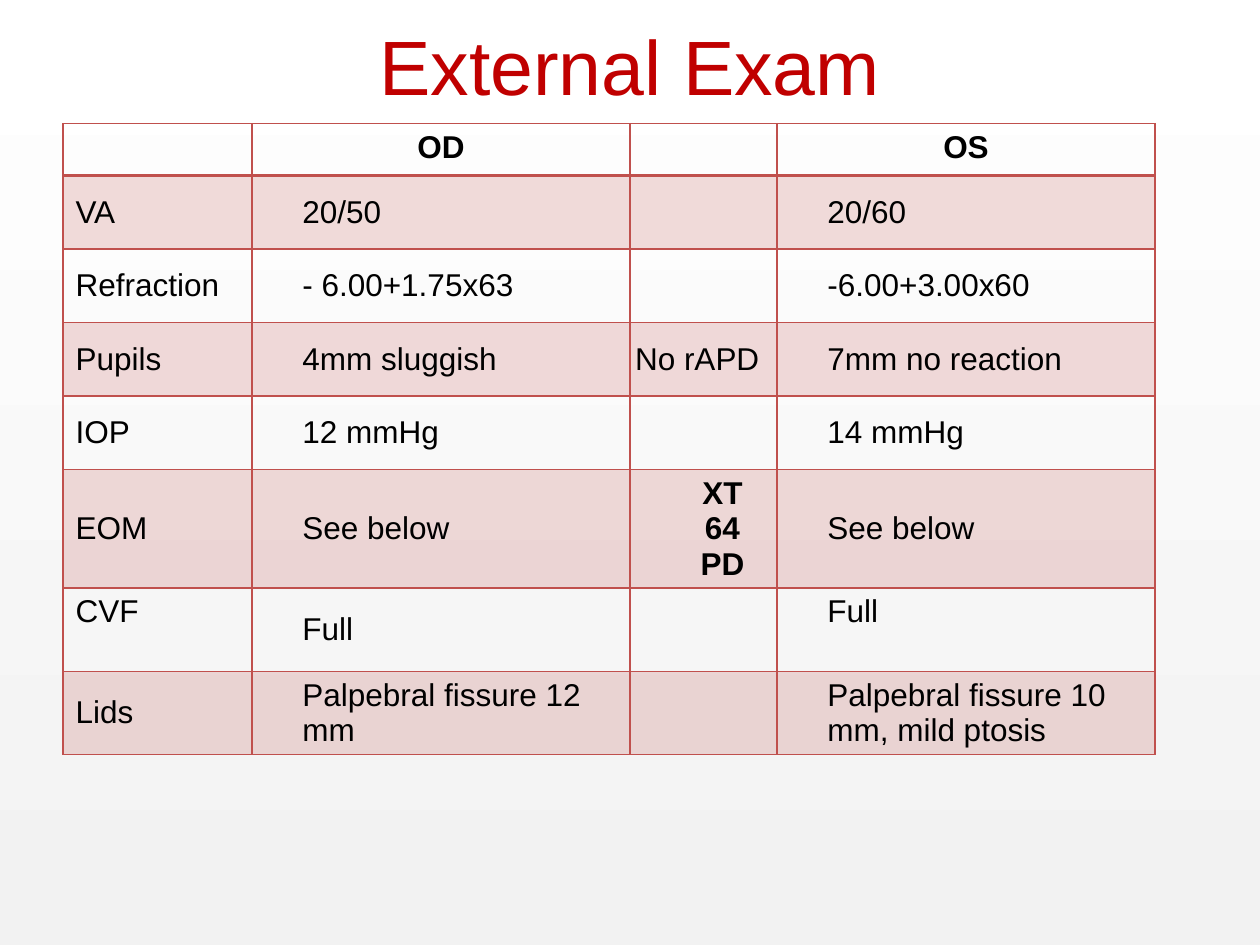
from lxml import etree
from pptx import Presentation
from pptx.dml.color import RGBColor
from pptx.enum.text import MSO_ANCHOR, PP_ALIGN
from pptx.oxml.ns import qn
from pptx.util import Pt

LEFT, CENTER = PP_ALIGN.LEFT, PP_ALIGN.CENTER
TOP, MIDDLE = MSO_ANCHOR.TOP, MSO_ANCHOR.MIDDLE

FONT = "Arial"
COLORS = {
    "title": "C00000",
    "text": "000000",
    "accent": "C0504D",
    "page_top": "FFFFFF",
    "page_bottom": "F2F2F2",
}
BAND_OPACITY = 20
TITLE_ONLY_LAYOUT = 5

EXAM = [
    ["", "OD", "", "OS"],
    ["VA", "20/50", "", "20/60"],
    ["Refraction", "- 6.00+1.75x63", "", "-6.00+3.00x60"],
    ["Pupils", "4mm sluggish", "No rAPD", "7mm no reaction"],
    ["IOP", "12 mmHg", "", "14 mmHg"],
    ["EOM", "See below", "XT 64 PD", "See below"],
    ["CVF", "Full", "", "Full"],
    ["Lids", "Palpebral fissure 12 mm", "", "Palpebral fissure 10 mm, mild ptosis"],
]
COLUMN_WIDTHS = [108, 216, 84, 216]
ROW_HEIGHTS = [29.5, 42.3, 42, 42, 42, 67.4, 47.6, 47.5]
INDENT = 28.8
CELL_MARGIN = 7.2
TOP_ANCHORED = {(6, 0), (6, 3)}


def write_text(frame, text, size=18, color="text", bold=False, align=LEFT):
    paragraph = frame.paragraphs[0]
    paragraph.alignment = align
    run = paragraph.add_run()
    run.text = text
    run.font.name = FONT
    run.font.size = Pt(size)
    run.font.bold = bold
    run.font.color.rgb = RGBColor.from_string(COLORS[color])


def paint_background(slide):
    fill = slide.background.fill
    fill.gradient()
    fill.gradient_angle = 90
    for stop, name in zip(fill.gradient_stops, ("page_bottom", "page_top")):
        stop.color.rgb = RGBColor.from_string(COLORS[name])


def add_title(slide):
    title = slide.shapes.title
    title.left, title.top, title.width, title.height = Pt(36), Pt(-7.9), Pt(648), Pt(90)
    title.text_frame.vertical_anchor = MIDDLE
    write_text(title.text_frame, "External Exam", size=44, color="title", align=CENTER)


def set_borders(cell, top=1, bottom=1):
    properties = cell._tc.get_or_add_tcPr()
    for side, width in (("L", 1), ("R", 1), ("T", top), ("B", bottom)):
        line = etree.SubElement(properties, qn(f"a:ln{side}"), w=str(Pt(width)))
        solid = etree.SubElement(line, qn("a:solidFill"))
        etree.SubElement(solid, qn("a:srgbClr"), val=COLORS["accent"])


def fill_cell(cell, banded):
    if not banded:
        cell.fill.background()
        return
    cell.fill.solid()
    cell.fill.fore_color.rgb = RGBColor.from_string(COLORS["accent"])
    tint = cell._tc.tcPr.find(f"{qn('a:solidFill')}/{qn('a:srgbClr')}")
    etree.SubElement(tint, qn("a:alpha"), val=str(BAND_OPACITY * 1000))


def format_cell(cell, row, column, text):
    header, middle_column = row == 0, column == 2
    set_borders(cell, top=2 if row == 1 else 1, bottom=2 if header else 1)
    fill_cell(cell, banded=row % 2 == 1)
    if not text:
        return
    at_top = header or (row, column) in TOP_ANCHORED
    cell.vertical_anchor = TOP if at_top else MIDDLE
    if text == "No rAPD":
        cell.margin_left = 0
    else:
        cell.margin_left = Pt(CELL_MARGIN if header or column == 0 else INDENT)
    write_text(cell.text_frame, text, bold=header or text == "XT 64 PD",
               align=CENTER if header or middle_column else LEFT)


def add_exam_table(slide):
    frame = slide.shapes.add_table(len(EXAM), len(COLUMN_WIDTHS), Pt(36), Pt(70.6),
                                   Pt(sum(COLUMN_WIDTHS)), Pt(sum(ROW_HEIGHTS)))
    table = frame.table
    table.first_row = False
    table.horz_banding = False
    for column, width in zip(table.columns, COLUMN_WIDTHS):
        column.width = Pt(width)
    for row, height in zip(table.rows, ROW_HEIGHTS):
        row.height = Pt(height)
    for r, findings in enumerate(EXAM):
        for c, text in enumerate(findings):
            format_cell(table.cell(r, c), r, c, text)


def main():
    deck = Presentation()
    deck.slide_width, deck.slide_height = Pt(720), Pt(540)
    slide = deck.slides.add_slide(deck.slide_layouts[TITLE_ONLY_LAYOUT])
    paint_background(slide)
    add_exam_table(slide)
    add_title(slide)
    deck.save("out.pptx")


if __name__ == "__main__":
    main()
